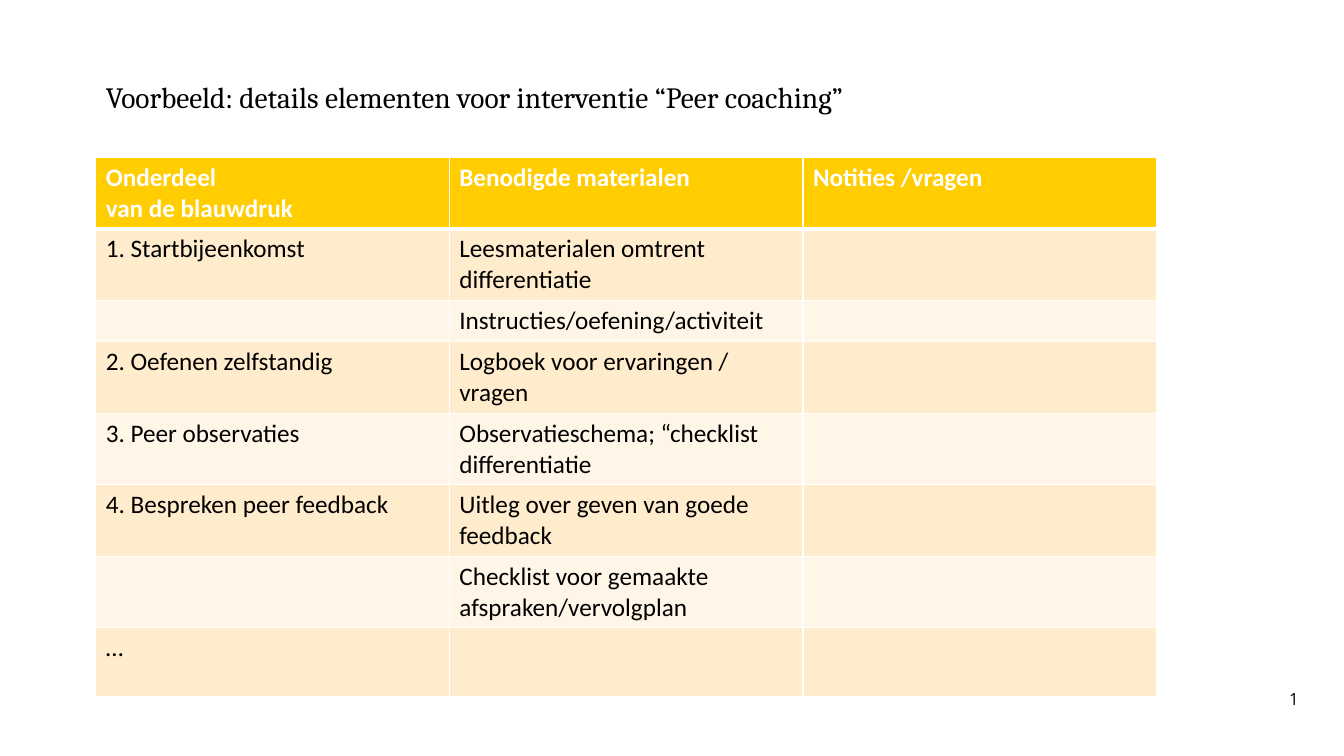
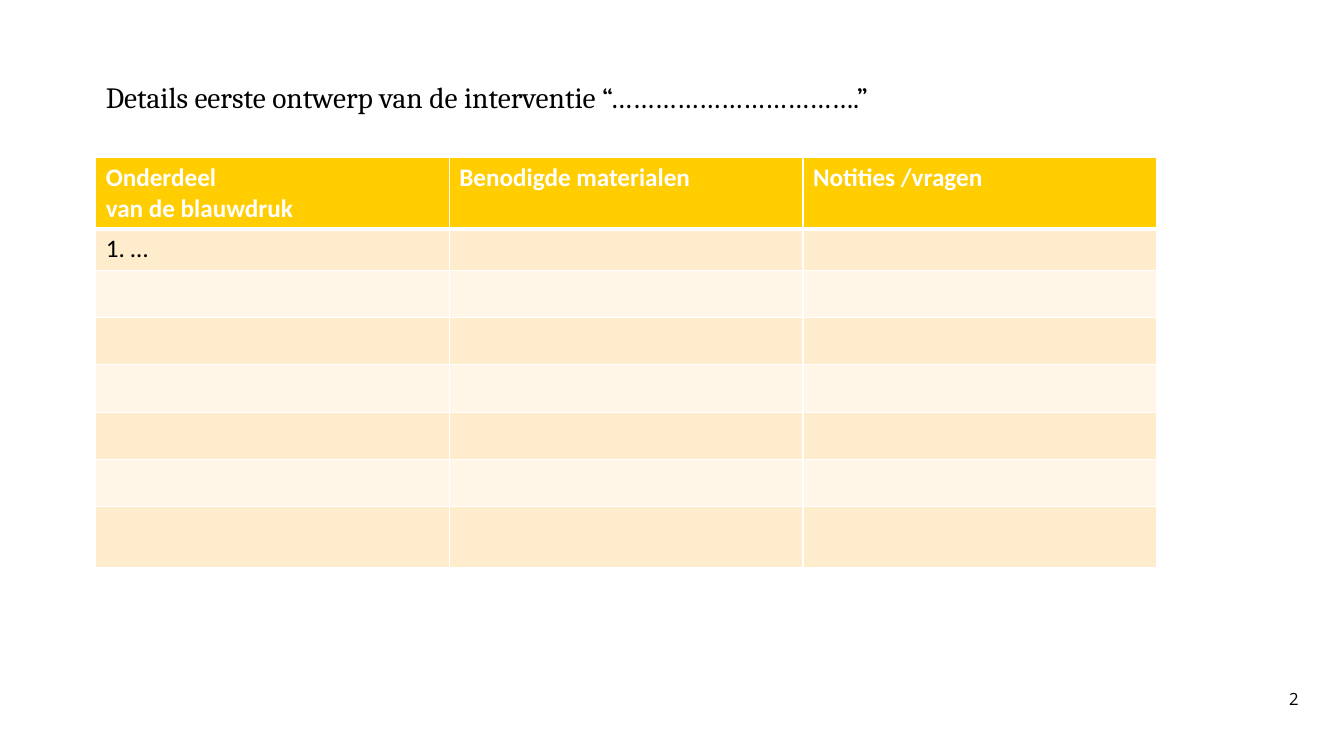
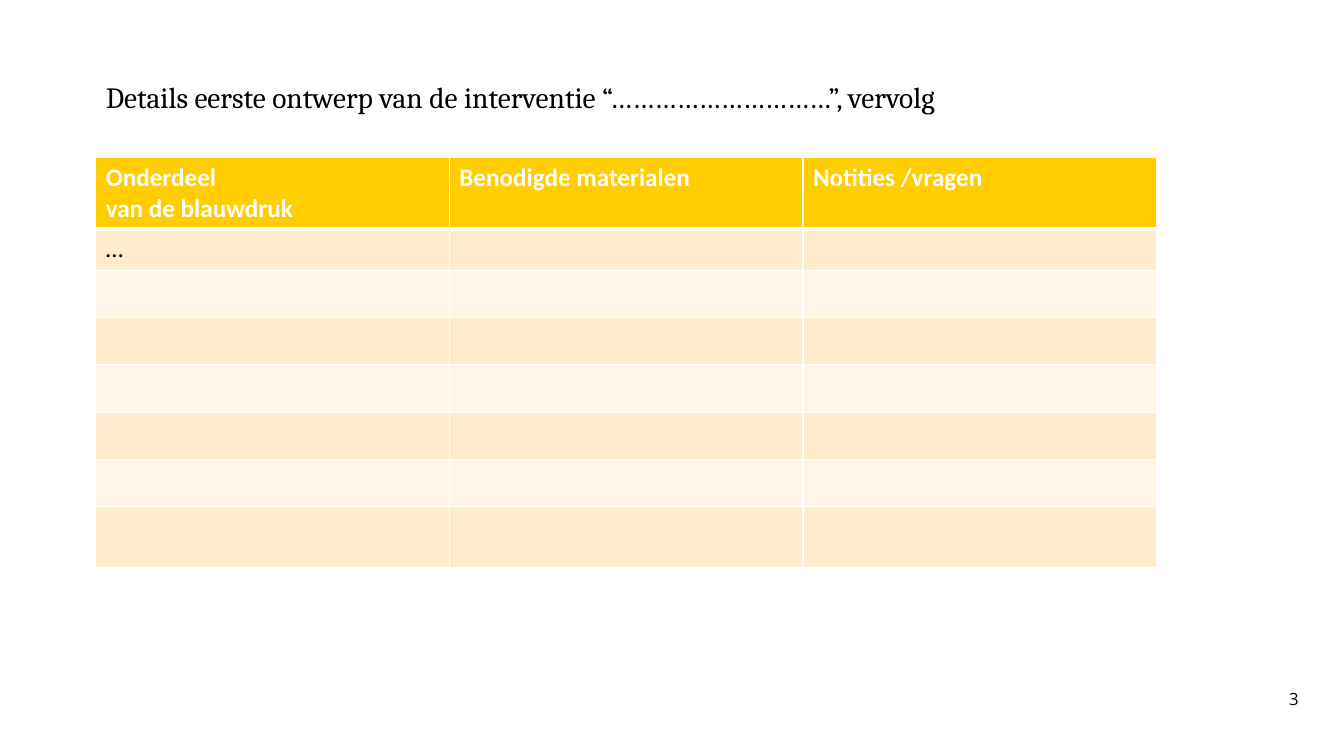
from lxml import etree
from pptx import Presentation
from pptx.dml.color import RGBColor
from pptx.enum.text import MSO_ANCHOR, MSO_AUTO_SIZE, PP_ALIGN
from pptx.oxml import parse_xml
from pptx.oxml.ns import nsdecls, qn
from pptx.util import Pt

TOP, MIDDLE = MSO_ANCHOR.TOP, MSO_ANCHOR.MIDDLE
LEFT, RIGHT = PP_ALIGN.LEFT, PP_ALIGN.RIGHT
NO_FIT = MSO_AUTO_SIZE.NONE
EMU_PER_PX = 9144  # 100 px to the inch
TITLE_ONLY = 5

COLORS = {
    "text": "000000",
    "header": "FFCD00",
    "header_text": "FFFFFF",
    "band_dark": "FFECCC",
    "band_light": "FFF6E7",
    "border": "FFFFFF",
}
TITLE_FONT, TABLE_FONT, NUMBER_FONT = "Cambria", "Calibri", "Open Sans"
THIN, THICK = 0.96, 3

HEADER = ("Onderdeel\nvan de blauwdruk", "Benodigde materialen", "Notities /vragen")
COLUMN_WIDTH = 351
TWO_LINES, ONE_LINE, BLANK = 71, 41, 47


def px(length):
    return length * EMU_PER_PX


class Deck:
    """Holds the shared style and the current page."""

    def __init__(self):
        self.file = Presentation()
        self.file.slide_width, self.file.slide_height = px(1334), px(750)
        self.page = None

    def add_page(self, title):
        layout = self.file.slide_layouts[TITLE_ONLY]
        self.page = self.file.slides.add_slide(layout)
        self.title(title)
        self.page_number()

    def style(self, font, name, size, color="text", bold=False):
        font.name, font.size, font.bold = name, Pt(size), bold
        font.color.rgb = RGBColor.from_string(COLORS[color])

    def title(self, text):
        box = self.page.shapes.title
        box.left, box.top, box.width, box.height = map(px, (95, 73, 1053, 137))
        frame = box.text_frame
        frame.text = text
        frame.auto_size, frame.word_wrap = NO_FIT, True
        frame.vertical_anchor = TOP
        para = frame.paragraphs[0]
        para.alignment = LEFT
        self.style(para.runs[0].font, TITLE_FONT, 21)

    def page_number(self):
        box = self.page.shapes.add_textbox(*map(px, (1219, 673, 70, 41)))
        frame = box.text_frame
        frame.word_wrap = True
        frame.vertical_anchor = MIDDLE
        frame.margin_left = frame.margin_right = 0
        frame.margin_top = frame.margin_bottom = 0
        para = frame.paragraphs[0]
        para.alignment = RIGHT
        # A styled run becomes a live slide-number field
        span = para.add_run()
        span.text = str(len(self.file.slides))
        self.style(span.font, NUMBER_FONT, 12)
        field = etree.SubElement(para._p, qn("a:fld"), type="slidenum",
                                 id="{B6F15528-21DE-4FAA-801E-634DDDAF4B2B}")
        field.extend(list(span._r))
        para._p.remove(span._r)

    def borders(self, cell, top, bottom):
        properties = cell._tc.get_or_add_tcPr()
        widths = {"lnL": THIN, "lnR": THIN, "lnT": top, "lnB": bottom}
        for side, width in widths.items():
            properties.append(parse_xml(
                f'<a:{side} {nsdecls("a")} w="{Pt(width)}"><a:solidFill>'
                f'<a:srgbClr val="{COLORS["border"]}"/></a:solidFill></a:{side}>'))

    def cell(self, cell, text, row):
        # Header rule is shared by the header row and the first body row
        self.borders(cell, THICK if row == 1 else THIN, THICK if row == 0 else THIN)
        is_header = row == 0
        band = "band_dark" if row % 2 else "band_light"
        cell.fill.solid()
        cell.fill.fore_color.rgb = RGBColor.from_string(
            COLORS["header" if is_header else band])
        cell.text_frame.text = text
        color = "header_text" if is_header else "text"
        for para in cell.text_frame.paragraphs:
            for span in para.runs:
                self.style(span.font, TABLE_FONT, 18, color, is_header)

    def table(self, body, heights):
        rows = [HEADER] + body
        columns = len(HEADER)
        frame = self.page.shapes.add_table(
            len(rows), columns, px(95), px(156),
            px(COLUMN_WIDTH * columns), px(sum(heights)))
        table = frame.table
        table.horz_banding = False
        for column in table.columns:
            column.width = px(COLUMN_WIDTH)
        for index, (texts, height) in enumerate(zip(rows, heights)):
            table.rows[index].height = px(height)
            for column, text in enumerate(texts):
                self.cell(table.cell(index, column), text, index)


def main():
    deck = Deck()

    # Worked example
    deck.add_page("Voorbeeld: details elementen voor interventie “Peer coaching”")
    deck.table(
        [
            ("1. Startbijeenkomst", "Leesmaterialen omtrent differentiatie", ""),
            ("", "Instructies/oefening/activiteit", ""),
            ("2. Oefenen zelfstandig", "Logboek voor ervaringen / vragen", ""),
            ("3. Peer observaties", "Observatieschema; “checklist differentiatie", ""),
            ("4. Bespreken peer feedback", "Uitleg over geven van goede feedback", ""),
            ("", "Checklist voor gemaakte afspraken/vervolgplan", ""),
            ("…", "", ""),
        ],
        [TWO_LINES, TWO_LINES, ONE_LINE] + [TWO_LINES] * 4 + [68],
    )

    # Forms to fill in
    forms = [
        ("Details eerste ontwerp van de interventie “…………………………….”", "1. …"),
        ("Details eerste ontwerp van de interventie “…………………………”, vervolg", "…"),
    ]
    for title, first_entry in forms:
        deck.add_page(title)
        deck.table([(first_entry, "", "")] + [("", "", "")] * 6,
                   [TWO_LINES, ONE_LINE] + [BLANK] * 5 + [60])

    deck.file.save("out.pptx")


if __name__ == "__main__":
    main()
